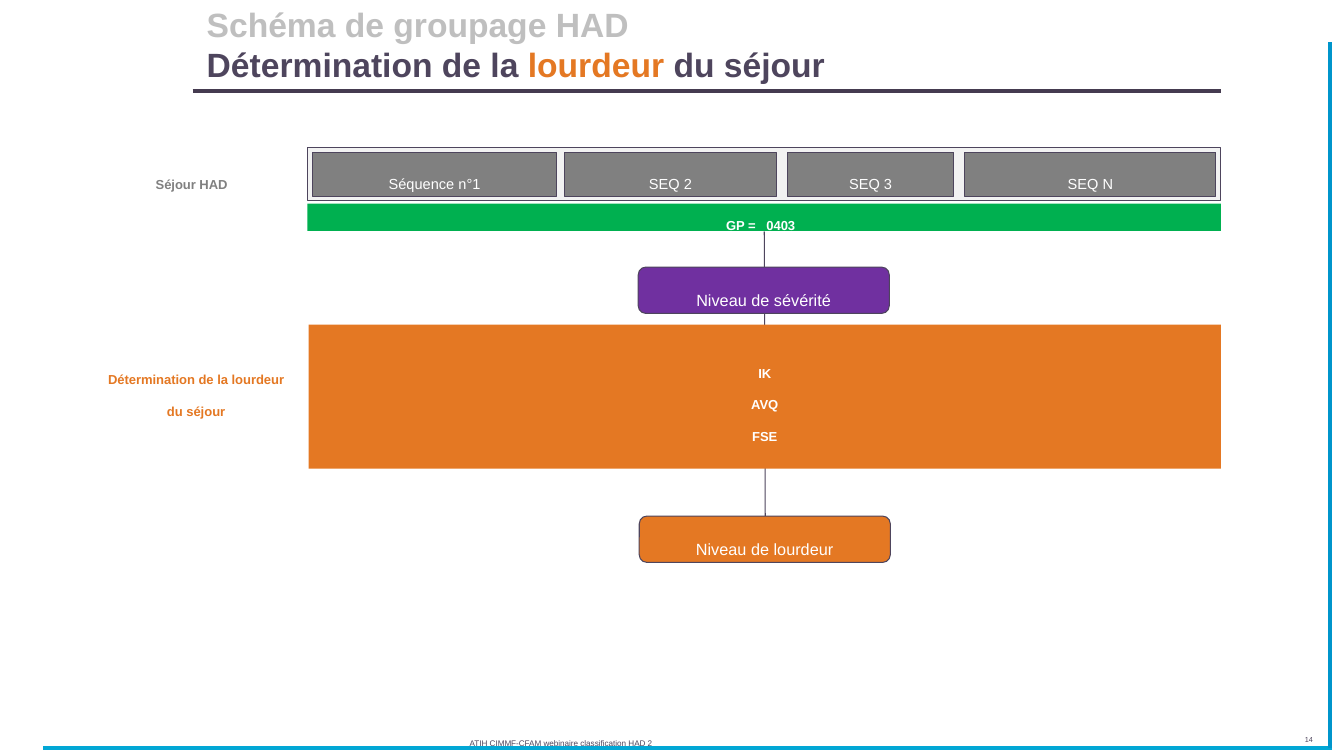
"""Build the slide on how the severity of a home-care stay is determined."""
from pptx import Presentation
from pptx.dml.color import RGBColor
from pptx.enum.shapes import MSO_CONNECTOR, MSO_SHAPE
from pptx.enum.text import MSO_ANCHOR, PP_ALIGN
from pptx.oxml.ns import qn
from pptx.util import Inches, Pt

INK = RGBColor(0x4E, 0x45, 0x5D)
RULE = RGBColor(0x45, 0x3B, 0x50)
CYAN = RGBColor(0x02, 0xA7, 0xD5)
BLUE = RGBColor(0x00, 0x95, 0xCB)
ORANGE = RGBColor(0xE4, 0x78, 0x23)
PURPLE = RGBColor(0x70, 0x30, 0xA0)
GREEN = RGBColor(0x00, 0xB0, 0x50)
GREY = RGBColor(0x80, 0x80, 0x80)
SILVER = RGBColor(0xBF, 0xBF, 0xBF)
PALE = RGBColor(0xF2, 0xF2, 0xF2)
WHITE = RGBColor(0xFF, 0xFF, 0xFF)
RECT, ROUND = MSO_SHAPE.RECTANGLE, MSO_SHAPE.ROUNDED_RECTANGLE
SUBSCRIPT = "-30000"


def write(sp, text, size, color, bold=False, align=PP_ALIGN.CENTER):
    tf = sp.text_frame
    tf.word_wrap = True
    for i, line in enumerate(text.split("\n")):
        p = tf.paragraphs[0] if i == 0 else tf.add_paragraph()
        p.alignment = align
        r = p.add_run()
        r.text = line
        r.font.color.rgb = color
        for name, value in {"name": "Arial", "size": Pt(size), "bold": bold}.items():
            setattr(r.font, name, value)
        r._r.get_or_add_rPr().set("baseline", SUBSCRIPT)


def add_line(x1, y1, x2, y2, color, width):
    cn = s.shapes.add_connector(MSO_CONNECTOR.STRAIGHT, Inches(x1), Inches(y1), Inches(x2), Inches(y2))
    cn.line.color.rgb = color
    cn.line.width = Pt(width)
    cn._element.spPr.append(cn._element.makeelement(qn("a:effectLst"), {}))


prs = Presentation()
prs.slide_width, prs.slide_height = Inches(13.33), Inches(7.5)
s = prs.slides.add_slide(prs.slide_layouts[5])

for rule in [
    (1.91, 0.9, 12.11, 0.9, RULE, 3.06),
    (0.43, 7.42, 13.21, 7.42, CYAN, 3.06),
    (13.19, 7.42, 13.19, 0.42, BLUE, 3.06),
    (7.58, 2.29, 7.59, 5.12, INK, 0.75),
]:
    add_line(*rule)

title = s.shapes.title
for name, value in zip(("left", "top", "width", "height"), (1.95, 0.08, 10.17, 0.81)):
    setattr(title, name, Inches(value))
title.text_frame.vertical_anchor = MSO_ANCHOR.BOTTOM
p = title.text_frame.paragraphs[0]
p.alignment = PP_ALIGN.LEFT
for text, color in [
    ("Schéma de groupage HAD", SILVER),
    ("Détermination de la", INK),
    (" lourdeur ", ORANGE),
    ("du séjour", INK),
]:
    r = p.add_run()
    r.text = text
    r.font.color.rgb = color
    for name, value in {"name": "Arial", "size": Pt(24), "bold": True}.items():
        setattr(r.font, name, value)
    if color == SILVER:
        p.add_line_break()

for kind, x, y, w, h, fill, outlined, inset, text, size, bold in [
    (RECT, 3.05, 1.46, 9.06, 0.53, PALE, True, (0, 0), "", 18, False),
    (RECT, 3.1, 1.51, 2.42, 0.44, GREY, True, (0, 0), "Séquence n°1", 18, False),
    (RECT, 5.6, 1.51, 2.1, 0.44, GREY, True, (0, 0), "SEQ 2", 18, False),
    (RECT, 7.81, 1.51, 1.65, 0.44, GREY, True, (0, 0), "SEQ 3", 18, False),
    (RECT, 9.57, 1.51, 2.49, 0.44, GREY, True, (0, 0), "SEQ N", 18, False),
    (RECT, 3.05, 2.02, 9.06, 0.27, GREEN, False, (0.04, 0), "GP = _0403_", 16, True),
    (ROUND, 6.33, 2.65, 2.49, 0.46, PURPLE, True, (0.04, 0.04), "Niveau de sévérité", 20, False),
    (RECT, 3.06, 3.22, 9.05, 1.43, ORANGE, False, (0.04, 0.04), "IK\nAVQ\nFSE", 16, True),
    (ROUND, 6.34, 5.12, 2.49, 0.46, ORANGE, True, (0.04, 0.04), "Niveau de lourdeur", 20, False),
]:
    sp = s.shapes.add_shape(kind, Inches(x), Inches(y), Inches(w), Inches(h))
    sp.shadow.inherit = False
    sp.fill.solid()
    sp.fill.fore_color.rgb = fill
    if outlined:
        sp.line.color.rgb = INK
        sp.line.width = Pt(0.75)
    else:
        sp.line.fill.background()
    tf = sp.text_frame
    tf.vertical_anchor = MSO_ANCHOR.MIDDLE
    tf.margin_left = tf.margin_right = Inches(inset[0])
    tf.margin_top = tf.margin_bottom = Inches(inset[1])
    if text:
        write(sp, text, size, WHITE, bold)

for x, y, w, h, text, size, color, bold, align in [
    (0.74, 1.54, 2.32, 0.37, "Séjour HAD", 16, GREY, True, PP_ALIGN.CENTER),
    (0.88, 3.48, 2.13, 0.91, "Détermination de la lourdeur du séjour", 16, ORANGE, True, PP_ALIGN.CENTER),
    (4.56, 7.18, 5.42, 0.21, "ATIH CIMMF-CFAM webinaire classification HAD 2", 10, INK, False, PP_ALIGN.LEFT),
    (12.38, 7.15, 0.74, 0.24, "14", 9, INK, False, PP_ALIGN.RIGHT),
]:
    sp = s.shapes.add_textbox(Inches(x), Inches(y), Inches(w), Inches(h))
    write(sp, text, size, color, bold, align)

prs.save("out.pptx")
